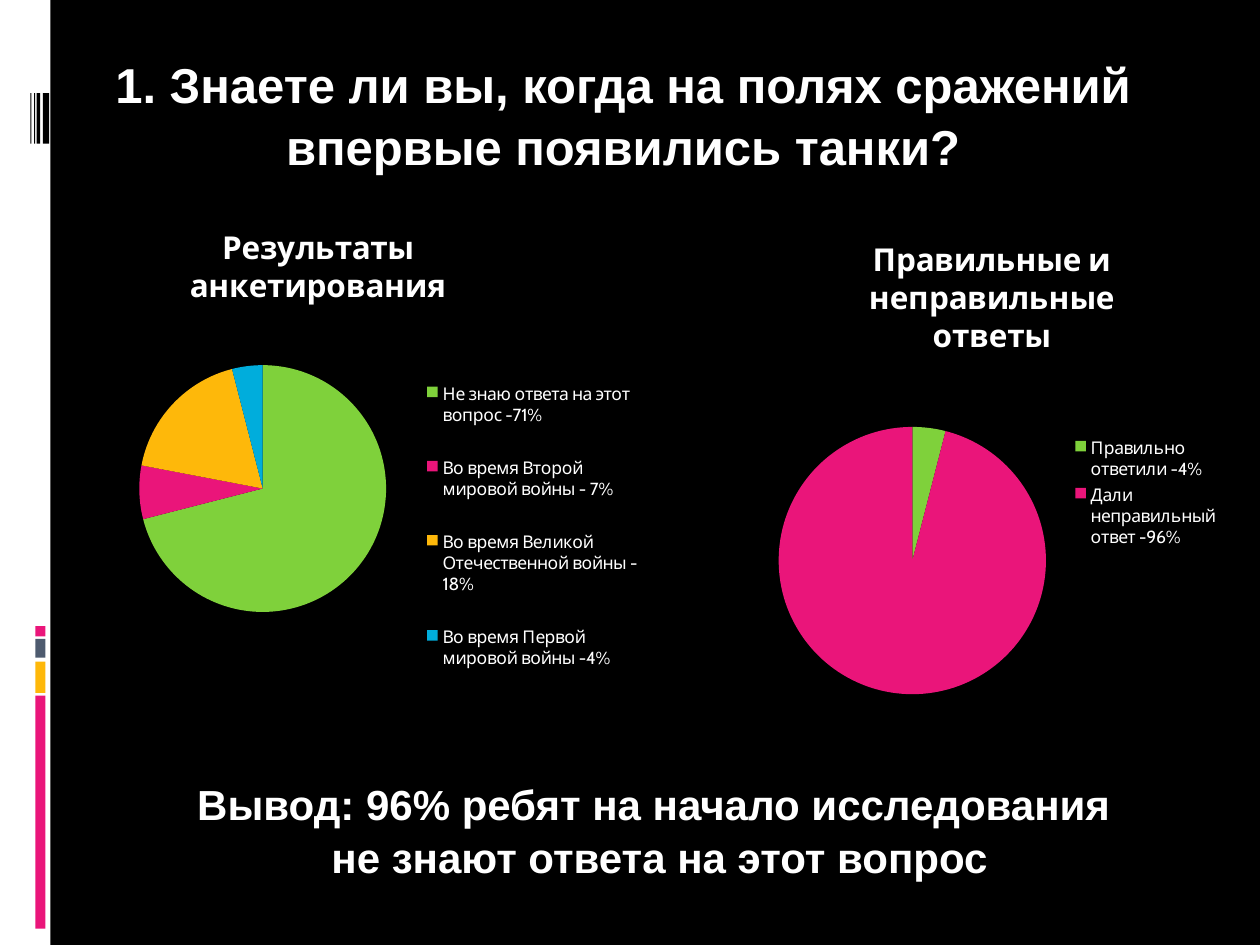
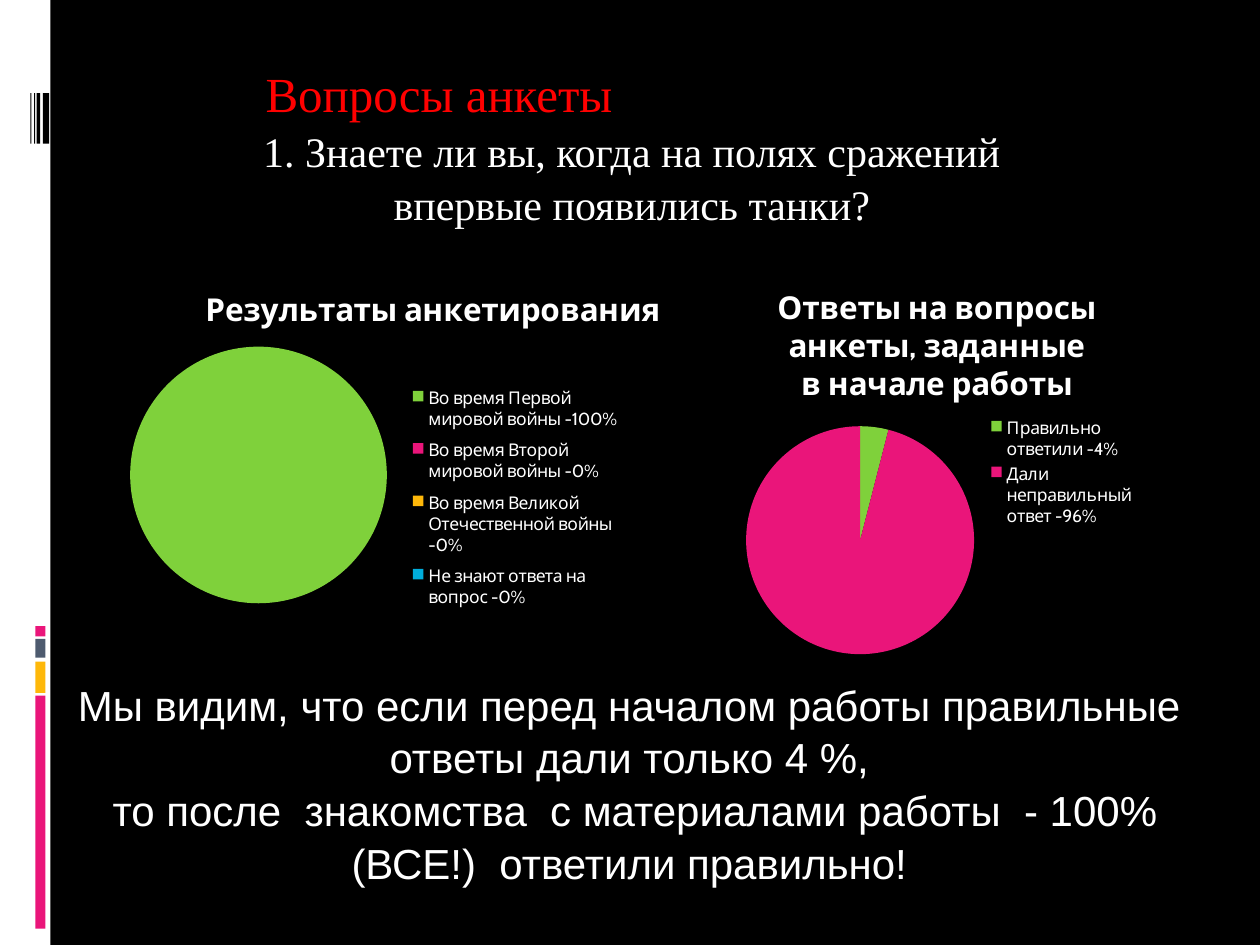
"""Build two survey slides comparing answers before and after the tank project."""
from lxml import etree
from pptx import Presentation
from pptx import util as u
from pptx.chart.data import CategoryChartData
from pptx.dml.color import RGBColor
from pptx.enum import chart as ch, shapes, text

COLORS = {"black": "000000", "white": "FFFFFF", "red": "FF0000", "green": "7FD13B",
          "pink": "EA157A", "amber": "FEB80A", "blue": "00ADDC", "slate": "4E5B6F"}
SLICES = ["green", "pink", "amber", "blue"]
BARS = [(0, 0, 0.4, 7.5, "white"),
        (0.28, 5.52, 0.08, 1.85, "pink"), (0.28, 5.25, 0.08, 0.25, "amber"),
        (0.28, 5.07, 0.08, 0.15, "slate"), (0.28, 4.97, 0.08, 0.08, "pink")]
BARS += [(x, 0.74, w, 0.4, "black") for x, w in [(0.34, 0.05), (0.29, 0.03), (0.27, 0.01), (0.24, 0.01)]]

QUESTION = "1. Знаете ли вы, когда на полях сражений впервые появились танки?"
START_ANSWERS = [("Правильно ответили -4%", 4), ("Дали неправильный ответ -96%", 96)]

SLIDES = [
    {"charts": [
        {"title": "Результаты анкетирования", "at": (0.91, 1.15, 4.25, 4.96),
         "answers": [("Не знаю ответа на этот вопрос -71%", 71),
                     ("Во время Второй мировой войны - 7%", 7),
                     ("Во время Великой Отечественной войны - 18%", 18),
                     ("Во время Первой мировой войны -4%", 4)],
         "layouts": {"plotArea": (0.046, 0.155, 0.461, 0.79),
                     "legend": (0.57, 0.33, 0.42, 0.56), "title": (0.13, 0.12)}},
        {"title": "Правильные и неправильные ответы", "at": (6.02, 1.7, 3.7, 4.33),
         "answers": START_ANSWERS,
         "layouts": {"plotArea": (0.04, 0.39, 0.58, 0.49), "legend": (0.66, 0.4, 0.34, 0.22)}}],
     "texts": [
         ([QUESTION], (0.59, 0.36, 8.71, 1.35), dict(size=28, bold=True)),
         (["Вывод: 96% ребят на начало исследования ", "не знают ответа на этот вопрос"],
          (0.67, 6.11, 9.13, 1.21), dict(bold=True))]},
    {"charts": [
        {"title": "Результаты анкетирования", "at": (0.83, 2.1, 5.21, 4.25),
         "answers": [("Во время Первой мировой войны -100%", 100),
                     ("Во время Второй мировой войны -0%", 0),
                     ("Во время Великой Отечественной войны -0%", 0),
                     ("Не знают ответа на вопрос -0%", 0)],
         "layouts": {"plotArea": (0.039, 0.132, 0.391, 0.522), "legend": (0.46, 0.21, 0.33, 0.45)}},
        {"title": "Ответы на вопросы анкеты, заданные в начале работы", "at": (5.79, 2.1, 3.29, 3.29),
         "answers": START_ANSWERS,
         "layouts": {"plotArea": (0.04, 0.39, 0.55, 0.55), "legend": (0.64, 0.36, 0.34, 0.28)}}],
     "texts": [
         (["Вопросы анкеты"], (2.01, 0.44, 3.18, 0.57),
          dict(size=28, font="Times New Roman", color="red", align="LEFT", anchor="MIDDLE", wrap=False)),
         ([QUESTION], (1.61, 0.94, 6.81, 0.91), dict(font="Times New Roman", anchor="MIDDLE")),
         (["Мы видим, что если перед началом работы правильные ответы дали только 4 %,",
           " то после  знакомства  с материалами работы  - 100% (ВСЕ!)  ответили правильно!"],
          (0.51, 5.32, 8.97, 1.72), {})]},
]


def add_text(s, lines, at, size=24, font="Arial", color="white", bold=False,
             align="CENTER", anchor="TOP", wrap=True):
    tf = s.shapes.add_textbox(*map(u.Inches, at)).text_frame
    tf.word_wrap = wrap
    tf.auto_size = text.MSO_AUTO_SIZE.SHAPE_TO_FIT_TEXT
    tf.vertical_anchor = text.MSO_ANCHOR[anchor]
    for i, line in enumerate(lines):
        p = tf.paragraphs[0] if i == 0 else tf.add_paragraph()
        p.alignment = text.PP_ALIGN[align]
        p.line_spacing = 1.05
        r = p.add_run()
        r.text = line
        r.font.size, r.font.name, r.font.bold = u.Pt(size), font, bold
        r.font.color.rgb = RGBColor.from_string(COLORS[color])


def place_part(chart, part, box):
    parent = chart.element.xpath(f".//c:{part}")[0]
    for old in parent.xpath("./c:layout"):
        parent.remove(old)
    ns = "{http://schemas.openxmlformats.org/drawingml/2006/chart}"
    layout = etree.Element(ns + "layout")
    manual = etree.SubElement(layout, ns + "manualLayout")
    if part == "plotArea":
        etree.SubElement(manual, ns + "layoutTarget", val="inner")
    for mode in ("xMode", "yMode"):
        etree.SubElement(manual, ns + mode, val="edge")
    for name, value in zip("xywh", box):
        etree.SubElement(manual, ns + name, val=str(value))
    parent.insert(0 if part == "plotArea" else 1, layout)


prs = Presentation()
prs.slide_width, prs.slide_height = u.Inches(10), u.Inches(7.5)

for content in SLIDES:
    s = prs.slides.add_slide(prs.slide_layouts[6])
    s.background.fill.solid()
    s.background.fill.fore_color.rgb = RGBColor.from_string(COLORS["black"])

    for *at, color in BARS:
        sp = s.shapes.add_shape(shapes.MSO_SHAPE.RECTANGLE, *map(u.Inches, at))
        sp.shadow.inherit = False
        sp.fill.solid()
        sp.fill.fore_color.rgb = RGBColor.from_string(COLORS[color])
        sp.line.fill.background()

    for pie in content["charts"]:
        data = CategoryChartData()
        data.categories = [answer for answer, share in pie["answers"]]
        data.add_series("Series 1", [share for answer, share in pie["answers"]])
        chart = s.shapes.add_chart(ch.XL_CHART_TYPE.PIE, *map(u.Inches, pie["at"]), data).chart
        chart.font.size, chart.font.name = u.Pt(10), "Cabin"
        chart.font.color.rgb = RGBColor.from_string(COLORS["white"])
        chart.has_title = True
        p = chart.chart_title.text_frame.paragraphs[0]
        r = p.add_run()
        r.text = pie["title"]
        r.font.size, r.font.name, r.font.bold = u.Pt(18), "Cabin", True
        r.font.color.rgb = RGBColor.from_string(COLORS["white"])
        chart.has_legend = True
        chart.legend.position = ch.XL_LEGEND_POSITION.RIGHT
        chart.legend.include_in_layout = False
        chart.plots[0].vary_by_categories = True
        for i, color in zip(range(len(pie["answers"])), SLICES):
            point = chart.plots[0].series[0].points[i]
            point.format.fill.solid()
            point.format.fill.fore_color.rgb = RGBColor.from_string(COLORS[color])
            point.format.line.fill.background()
        for part, box in pie["layouts"].items():
            place_part(chart, part, box)

    for lines, at, style in content["texts"]:
        add_text(s, lines, at, **style)

prs.save("out.pptx")
